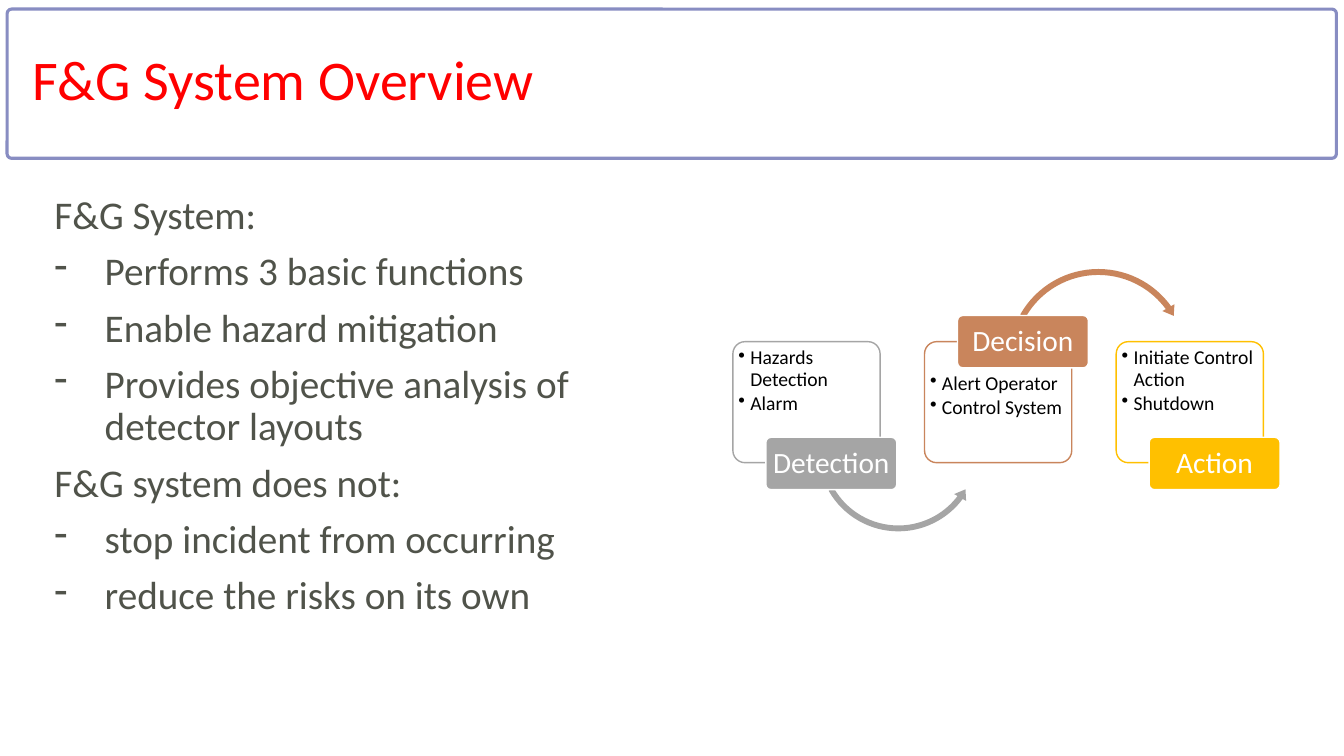
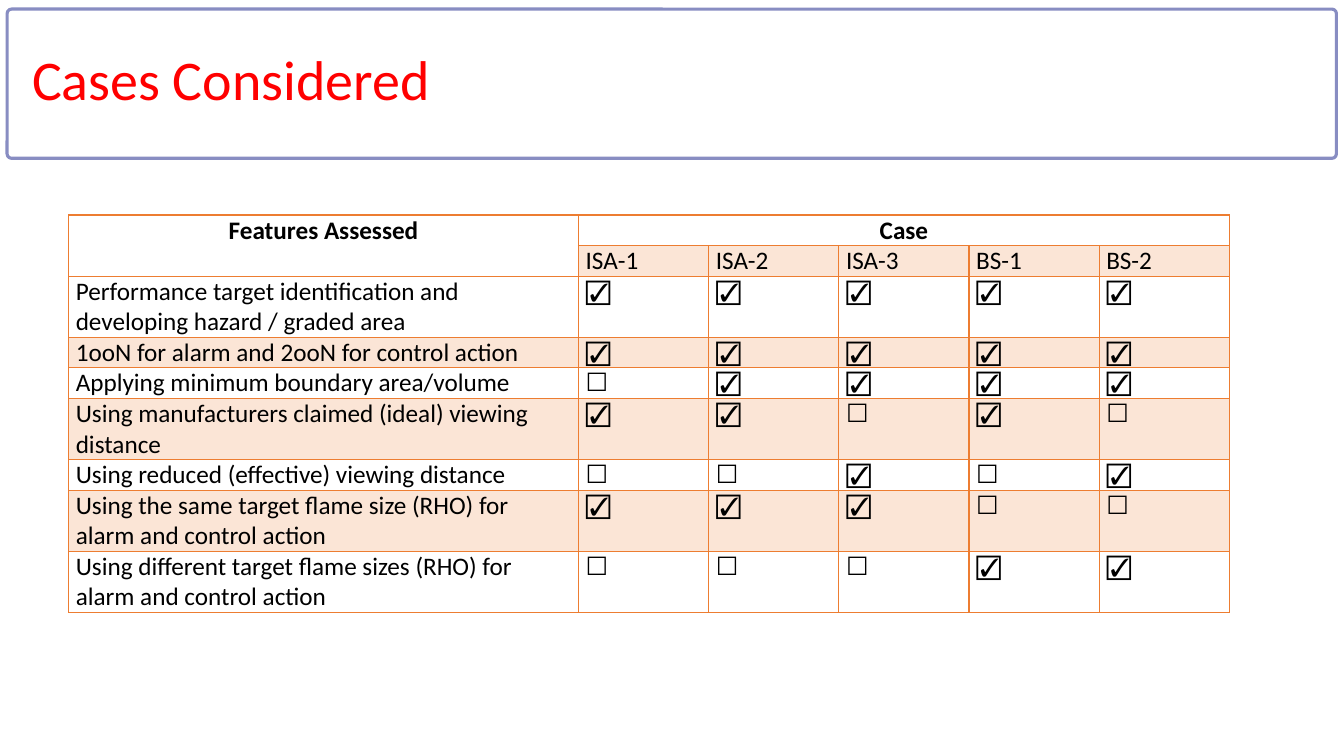
from dataclasses import dataclass

from lxml import etree
from pptx import Presentation
from pptx.dml.color import RGBColor
from pptx.enum import shapes, text
from pptx.oxml import ns
from pptx.util import Cm, Pt


@dataclass(frozen=True)
class Theme:
    font: str = "Calibri"
    title: RGBColor = RGBColor(0xFF, 0x00, 0x00)
    frame: RGBColor = RGBColor(0x88, 0x8D, 0xC2)
    body: RGBColor = RGBColor(0x50, 0x53, 0x4A)
    black: RGBColor = RGBColor(0x00, 0x00, 0x00)
    white: RGBColor = RGBColor(0xFF, 0xFF, 0xFF)
    gray: RGBColor = RGBColor(0xA5, 0xA5, 0xA5)
    copper: RGBColor = RGBColor(0xC9, 0x85, 0x5C)
    gold: RGBColor = RGBColor(0xFF, 0xC0, 0x00)
    border: RGBColor = RGBColor(0xED, 0x7D, 0x31)
    band: RGBColor = RGBColor(0xFB, 0xE5, 0xD6)
    title_size: int = 40
    body_size: int = 28
    badge_size: int = 21
    table_size: int = 18
    card_size: int = 14


theme = Theme()
SHAPE = shapes.MSO_SHAPE

deck = Presentation()
deck.slide_width, deck.slide_height = Cm(33.87), Cm(19.05)


def write_lines(frame, lines, size, color, gap=0, bullet=None, indent=0):
    """Write (text, bulleted) lines, with gap points between them."""
    frame.word_wrap = True
    for index, (line, bulleted) in enumerate(lines):
        para = frame.paragraphs[0] if index == 0 else frame.add_paragraph()
        para.text = line
        para.alignment = text.PP_ALIGN.LEFT
        para.line_spacing = 0.9
        if index:
            para.space_before = Pt(gap)
        if bulleted:
            props = para._p.get_or_add_pPr()
            props.set("marL", str(Cm(indent)))
            props.set("indent", str(-Cm(indent)))
            etree.SubElement(props, ns.qn("a:buChar")).set("char", bullet)
        para.font.name, para.font.size = theme.font, Pt(size)
        para.font.color.rgb = color


def add_titled_page(title):
    page = deck.slides.add_slide(deck.slide_layouts[6])
    frame = page.shapes.add_shape(SHAPE.ROUNDED_RECTANGLE, Cm(0.18), Cm(0.23), Cm(33.5), Cm(3.76))
    frame.adjustments[0] = 0.03
    frame.shadow.inherit = False
    frame.fill.background()
    frame.line.color.rgb, frame.line.width = theme.frame, Pt(2.25)
    box = page.shapes.add_textbox(Cm(0.56), Cm(1.19), Cm(23.24), Cm(2.67))
    write_lines(box.text_frame, [(title, False)], theme.title_size, theme.title)
    return page


# System overview
page = add_titled_page("F&G System Overview")
body = page.shapes.add_textbox(Cm(1.12), Cm(4.8), Cm(16.46), Cm(12.12))
body_lines = [
    ("F&G System:", False),
    ("Performs 3 basic functions", True),
    ("Enable hazard mitigation", True),
    ("Provides objective analysis of detector layouts", True),
    ("F&G system does not:", False),
    ("stop incident from occurring", True),
    ("reduce the risks on its own", True),
]
write_lines(body.text_frame, body_lines, theme.body_size, theme.body, 10, "-", 1.27)

# Arrows: preset, left, top, size, then shaft %, head degrees, end, start, head %
arrow_down = (SHAPE.LEFT_CIRCULAR_ARROW, 20.52, 9.25, 4.24, (3.5, 7.26, 36.86, 150.41, 4.1))
arrow_up = (SHAPE.CIRCULAR_ARROW, 25.32, 6.68, 4.72, (3.2, 6.48, 323.93, 209.59, 3.7))
stages = [
    ("Detection", ["Hazards Detection", "Alarm"], theme.gray, False, arrow_down),
    ("Decision", ["Alert Operator", "Control System"], theme.copper, True, arrow_up),
    ("Action", ["Initiate Control Action", "Shutdown"], theme.gold, False, None),
]
for index, (name, points, color, badge_on_top, arrow) in enumerate(stages):
    left = 18.47 + 4.83 * index
    card = page.shapes.add_shape(SHAPE.ROUNDED_RECTANGLE, Cm(left), Cm(8.61), Cm(3.71), Cm(3.05))
    card.fill.solid()
    card.fill.fore_color.rgb = theme.white
    card.line.color.rgb = color
    frame = card.text_frame
    frame.margin_left = frame.margin_right = frame.margin_bottom = Cm(0.05)
    frame.margin_top = Cm(0.72 if badge_on_top else 0.07)
    frame.vertical_anchor = text.MSO_ANCHOR.TOP
    write_lines(frame, [(point, True) for point in points],
                theme.card_size, theme.black, 2, "•", 0.3)

    if arrow:
        preset, arrow_left, arrow_top, size, (shaft, turn, end, start, head) = arrow
        arc = page.shapes.add_shape(preset, Cm(arrow_left), Cm(arrow_top), Cm(size), Cm(size))
        # One degree is 60000 units, and an adjustment of 1 is 100000
        values = (shaft / 100, turn * 0.6, end * 0.6, start * 0.6, head / 100)
        for position, value in enumerate(values):
            arc.adjustments[position] = value
        arc.shadow.inherit = False
        arc.fill.solid()
        arc.fill.fore_color.rgb = color
        arc.line.fill.background()

    badge = page.shapes.add_shape(SHAPE.ROUNDED_RECTANGLE, Cm(left + 0.83),
                                  Cm(7.95 if badge_on_top else 11.02), Cm(3.3), Cm(1.32))
    badge.fill.solid()
    badge.fill.fore_color.rgb = color
    badge.line.color.rgb = theme.white
    frame = badge.text_frame
    write_lines(frame, [(name, False)], theme.badge_size, theme.white)
    frame.word_wrap = False
    frame.vertical_anchor = text.MSO_ANCHOR.MIDDLE
    frame.paragraphs[0].alignment = text.PP_ALIGN.CENTER
    for shape in (card, badge):
        shape.adjustments[0] = 0.1
        shape.shadow.inherit = False
        shape.line.width = Pt(1)

# Cases table
page = add_titled_page("Cases Considered")
rows = [
    ["Features Assessed", "Case", "", "", "", ""],
    ["", "ISA-1", "ISA-2", "ISA-3", "BS-1", "BS-2"],
    ["Performance target identification and developing hazard / graded area", *"☑☑☑☑☑"],
    ["1ooN for alarm and 2ooN for control action", *"☑☑☑☑☑"],
    ["Applying minimum boundary area/volume", *"☐☑☑☑☑"],
    ["Using manufacturers claimed (ideal) viewing distance", *"☑☑☐☑☐"],
    ["Using reduced (effective) viewing distance", *"☐☐☑☐☑"],
    ["Using the same target flame size (RHO) for alarm and control action", *"☑☑☑☐☐"],
    ["Using different target flame sizes (RHO) for alarm and control action", *"☐☐☐☑☑"],
]
line_counts = [1, 1, 2, 1, 1, 2, 1, 2, 2]
line_height = 0.77
table = page.shapes.add_table(len(rows), 6, Cm(1.73), Cm(5.42), Cm(29.25),
                              Cm(line_height * sum(line_counts))).table
table.first_row = table.horz_banding = False
for index, column in enumerate(table.columns):
    column.width = Cm(3.28 if index else 12.85)
for row, count in zip(table.rows, line_counts):
    row.height = Cm(line_height * count)
table.cell(0, 0).merge(table.cell(1, 0))
table.cell(0, 1).merge(table.cell(0, 5))

for row_index, row in enumerate(rows):
    for column_index, value in enumerate(row):
        cell = table.cell(row_index, column_index)
        cell.margin_left = cell.margin_right = Cm(0.18)
        cell.margin_top = cell.margin_bottom = 0
        if row_index % 2 and (row_index > 1 or column_index):
            cell.fill.solid()
            cell.fill.fore_color.rgb = theme.band
        else:
            cell.fill.background()
        para = cell.text_frame.paragraphs[0]
        para.text = value
        para.font.name, para.font.size = theme.font, Pt(theme.table_size)
        para.font.color.rgb = theme.black
        para.font.bold = row_index == 0
        if row_index == 0:
            para.alignment = text.PP_ALIGN.CENTER
        for position, side in enumerate(("lnL", "lnR", "lnT", "lnB")):
            line = etree.Element(ns.qn(f"a:{side}"), w=str(Pt(1)))
            paint = etree.SubElement(line, ns.qn("a:solidFill"))
            etree.SubElement(paint, ns.qn("a:srgbClr"), val=str(theme.border))
            cell._tc.get_or_add_tcPr().insert(position, line)

deck.save("out.pptx")
